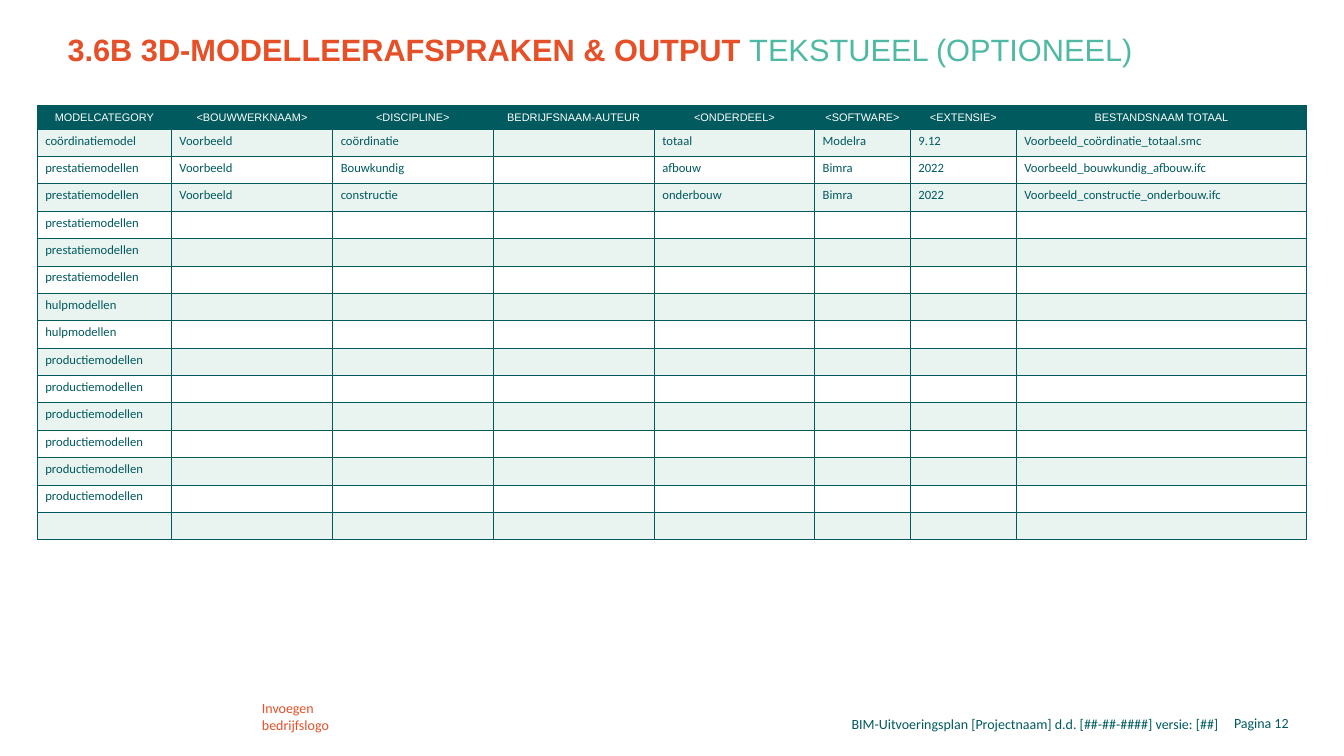
from lxml import etree
from pptx import Presentation
from pptx import util as u
from pptx.dml.color import RGBColor
from pptx.enum import text
from pptx.oxml import ns

PX = u.Inches(1) // 100
PETROL = RGBColor(0x00, 0x5A, 0x5E)
ORANGE = RGBColor(0xE5, 0x50, 0x28)
MINT = RGBColor(0x50, 0xB9, 0xA4)
PALE = RGBColor(0xE9, 0xF3, 0xF0)
WHITE = RGBColor(0xFF, 0xFF, 0xFF)
RIGHT, CENTER = text.PP_ALIGN.RIGHT, text.PP_ALIGN.CENTER
MIDDLE, TOP = text.MSO_ANCHOR.MIDDLE, text.MSO_ANCHOR.TOP

COLUMNS = {
    "MODELCATEGORY": 133,
    "<BOUWWERKNAAM>": 160,
    "<DISCIPLINE>": 159,
    "BEDRIJFSNAAM-AUTEUR": 160,
    "<ONDERDEEL>": 159,
    "<SOFTWARE>": 95,
    "<EXTENSIE>": 105,
    "BESTANDSNAAM TOTAAL": 288,
}
MODELS = [
    ["coördinatiemodel", "Voorbeeld", "coördinatie", "", "totaal", "Modelra", "9.12",
     "Voorbeeld_coördinatie_totaal.smc"],
    ["prestatiemodellen", "Voorbeeld", "Bouwkundig", "", "afbouw", "Bimra", "2022",
     "Voorbeeld_bouwkundig_afbouw.ifc"],
    ["prestatiemodellen", "Voorbeeld", "constructie", "", "onderbouw", "Bimra", "2022",
     "Voorbeeld_constructie_onderbouw.ifc"],
    *[["prestatiemodellen"]] * 3,
    *[["hulpmodellen"]] * 2,
    *[["productiemodellen"]] * 6,
    [],
]
HEADER_HEIGHT = 22


def px(length):
    return length * PX


def write(paragraph, words, size=10, color=PETROL, font="Calibri", bold=False, align=None):
    if align is not None:
        paragraph.alignment = align
    if not words:
        end = etree.SubElement(paragraph._p, ns.qn("a:endParaRPr"))
        end.set("sz", str(int(size * 100)))
        return
    run = paragraph.add_run()
    run.text = words
    run.font.size = u.Pt(size)
    run.font.name = font
    run.font.bold = bold
    run.font.color.rgb = color


def add_box(slide, box, left_inset=10, right_inset=10, anchor=TOP):
    frame = slide.shapes.add_textbox(*map(px, box)).text_frame
    frame.word_wrap = True
    frame.vertical_anchor = anchor
    frame.margin_left, frame.margin_right = px(left_inset), px(right_inset)
    frame.margin_top = frame.margin_bottom = px(5)
    return frame


def add_title(slide, box):
    paragraph = add_box(slide, box, left_inset=0).paragraphs[0]
    write(paragraph, "3.6B 3D-MODELLEERAFSPRAKEN & OUTPUT ", size=22, color=ORANGE, font="Arial", bold=True)
    write(paragraph, "TEKSTUEEL (OPTIONEEL)", size=22, color=MINT, font="Arial")


def add_borders(cell):
    properties = cell._tc.get_or_add_tcPr()
    for side in ("lnL", "lnR", "lnT", "lnB"):
        line = etree.SubElement(properties, ns.qn(f"a:{side}"), w=str(u.Pt(0.75)))
        fill = etree.SubElement(line, ns.qn("a:solidFill"))
        etree.SubElement(fill, ns.qn("a:srgbClr"), val=str(PETROL))


def fill_cell(cell, words, fill, anchor, side_inset, end_inset, **style):
    add_borders(cell)
    cell.fill.solid()
    cell.fill.fore_color.rgb = fill
    cell.vertical_anchor = anchor
    cell.margin_left = cell.margin_right = px(side_inset)
    cell.margin_top = cell.margin_bottom = px(end_inset)
    write(cell.text_frame.paragraphs[0], words, **style)


def add_model_table(slide, box):
    table = slide.shapes.add_table(len(MODELS) + 1, len(COLUMNS), *map(px, box)).table
    for column, width in zip(table.columns, COLUMNS.values()):
        column.width = px(width)
    table.rows[0].height = px(HEADER_HEIGHT)
    for index, heading in enumerate(COLUMNS):
        fill_cell(table.cell(0, index), heading, PETROL, MIDDLE, 10, 5,
                  size=7.8, color=WHITE, font="Arial", align=CENTER)
    for row, model in enumerate(MODELS, start=1):
        table.rows[row].height = px(box[3] - HEADER_HEIGHT) // len(MODELS)
        values = model + [""] * (len(COLUMNS) - len(model))
        for index, value in enumerate(values):
            fill_cell(table.cell(row, index), value, PALE if row % 2 else WHITE, TOP, 8, 4, size=9)


def add_footer(slide, box):
    left, top, width, height = box
    logo_frame = add_box(slide, (left, top, 114, height))
    write(logo_frame.paragraphs[0], "Invoegen", color=ORANGE)
    write(logo_frame.add_paragraph(), "bedrijfslogo", color=ORANGE)

    right = left + width
    plan = add_box(slide, (right - 628, top + 16, 541, 27))
    write(plan.paragraphs[0], "BIM-Uitvoeringsplan [Projectnaam] d.d. [##-##-####] versie: [##]", align=RIGHT)
    label = add_box(slide, (right - 98, top + 15, 54, 27), 0, 0)
    write(label.paragraphs[0], "Pagina", align=RIGHT)
    number = add_box(slide, (right - 44, top + 14, 44, 28), 0, 0, MIDDLE)
    write(number.paragraphs[0], " 12")


def main():
    presentation = Presentation()
    presentation.slide_width, presentation.slide_height = px(1333), px(750)
    slide = presentation.slides.add_slide(presentation.slide_layouts[6])
    add_footer(slide, (250, 689, 1055, 44))
    add_title(slide, (67, 26, 1133, 47))
    add_model_table(slide, (37, 105, sum(COLUMNS.values()), 430))
    presentation.save("out.pptx")


if __name__ == "__main__":
    main()
